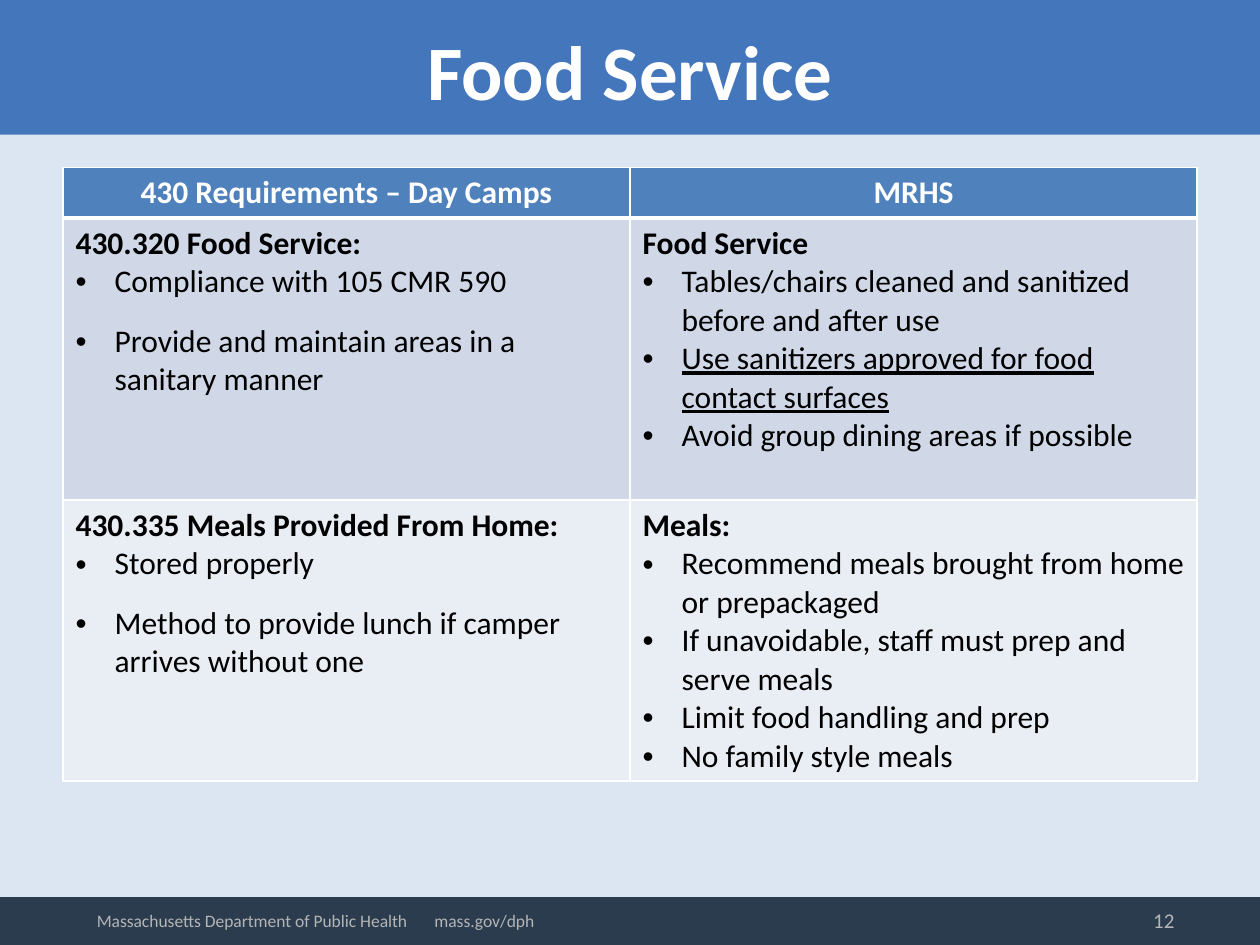
from lxml import etree
from pptx import Presentation
from pptx import util as u
from pptx.dml.color import RGBColor
from pptx.enum import shapes, text
from pptx.oxml.ns import qn

CELL = 0.5  # grid of 20 columns by 15 rows, in inches
WHITE, BLACK, GREY = "FFFFFF", "000000", "B5B5B5"
BAND, FOOTER, BACKDROP = "4376BB", "2A3C4E", "DCE6F2"
HEADER, ROW_FILLS = "4F81BD", ("D0D8E8", "E9EDF4")

HEADINGS = ("430 Requirements – Day Camps", "MRHS")
# Each cell: heading, bullets, space after a bullet
TOPICS = [
    [("430.320 Food Service:",
      ["Compliance with 105 CMR 590",
       "Provide and maintain areas in a sanitary manner"], 12),
     ("Food Service",
      ["Tables/chairs cleaned and sanitized before and after use",
       "Use sanitizers approved for food contact surfaces",
       "Avoid group dining areas if possible"], 0)],
    [("430.335 Meals Provided From Home:",
      ["Stored properly",
       "Method to provide lunch if camper arrives without one"], 12),
     ("Meals:",
      ["Recommend meals brought from home or prepackaged",
       "If unavoidable, staff must prep and serve meals",
       "Limit food handling and prep",
       "No family style meals"], 0)],
]
UNDERLINED = {"Use sanitizers approved for food contact surfaces"}


def color(value):
    return RGBColor.from_string(value)


def grid(*units):
    return [u.Inches(n * CELL) for n in units]


def paint(part, value):
    part.fill.solid()
    part.fill.fore_color.rgb = color(value)


class Deck:
    def __init__(self):
        self.prs = Presentation()
        self.prs.slide_width, self.prs.slide_height = grid(20, 15)
        self.slide = self.prs.slides.add_slide(self.prs.slide_layouts[6])
        background = self.slide.background
        paint(background, BACKDROP)

    def style(self, paragraph, size, ink, bold=False, underline=None):
        font = paragraph.font
        font.name, font.size = "Calibri", u.Pt(size)
        font.bold, font.underline = bold, underline
        font.color.rgb = color(ink)

    def band(self, top, height, fill):
        shape = self.slide.shapes.add_shape(
            shapes.MSO_SHAPE.RECTANGLE, *grid(0, top, 20, height))
        shape.shadow.inherit = False
        paint(shape, fill)
        shape.line.fill.background()

    def label(self, box, words, size, ink, align, bold=False, tab=None):
        frame = self.slide.shapes.add_textbox(*grid(*box)).text_frame
        frame.word_wrap = True
        frame.vertical_anchor = text.MSO_ANCHOR.MIDDLE
        paragraph = frame.paragraphs[0]
        paragraph.text, paragraph.alignment = words, align
        if tab:
            stops = etree.SubElement(paragraph._p.get_or_add_pPr(), qn("a:tabLst"))
            etree.SubElement(stops, qn("a:tab"), pos=str(u.Inches(tab)), algn="l")
        self.style(paragraph, size, ink, bold)

    def bullet(self, paragraph):
        props = paragraph._p.get_or_add_pPr()
        props.set("marL", str(u.Inches(0.31)))
        props.set("indent", str(u.Inches(-0.31)))
        etree.SubElement(props, qn("a:buFont"), typeface="Arial")
        etree.SubElement(props, qn("a:buChar"), char="•")

    def borders(self, cell, top=1, bottom=1):
        props = cell._tc.get_or_add_tcPr()
        widths = {"lnL": 1, "lnR": 1, "lnT": top, "lnB": bottom}
        for place, (side, width) in enumerate(widths.items()):
            line = etree.Element(qn("a:" + side), w=str(u.Pt(width)))
            fill = etree.SubElement(line, qn("a:solidFill"))
            etree.SubElement(fill, qn("a:srgbClr"), val=WHITE)
            props.insert(place, line)

    def topic(self, cell, heading, points, gap):
        frame = cell.text_frame
        frame.text = heading
        self.style(frame.paragraphs[0], 18, BLACK, bold=True)
        for point in points:
            paragraph = frame.add_paragraph()
            paragraph.text = point
            self.bullet(paragraph)
            paragraph.space_after = u.Pt(gap)
            self.style(paragraph, 18, BLACK, underline=point in UNDERLINED)

    def comparison(self, box, row_heights):
        table = self.slide.shapes.add_table(3, 2, *grid(*box)).table
        for row, height in zip(table.rows, grid(*row_heights)):
            row.height = height
        for column, heading in enumerate(HEADINGS):
            cell = table.cell(0, column)
            cell.text = heading
            paragraph = cell.text_frame.paragraphs[0]
            paragraph.alignment = text.PP_ALIGN.CENTER
            self.style(paragraph, 18, WHITE, bold=True)
            paint(cell, HEADER)
            self.borders(cell, bottom=3)
        for row, (topics, fill) in enumerate(zip(TOPICS, ROW_FILLS), start=1):
            for column, content in enumerate(topics):
                cell = table.cell(row, column)
                self.topic(cell, *content)
                paint(cell, fill)
                self.borders(cell, top=3 if row == 1 else 1)


def main():
    deck = Deck()
    align = text.PP_ALIGN

    # Title band and footer band
    deck.band(0, 2.14, BAND)
    deck.band(14.24, 0.76, FOOTER)
    deck.label((1, 0.16, 18, 1.9), "Food Service", 44, WHITE, align.CENTER, bold=True)

    # Requirements beside guidance
    deck.comparison((1, 2.66, 18, 9.62), (0.8, 4.48, 4.46))

    # Footer: page number, department and address
    deck.label((14.36, 14.2, 4.48, 0.8), "12", 12, GREY, align.RIGHT)
    deck.label((1.34, 14.24, 8.34, 0.74),
               "Massachusetts Department of Public Health\tmass.gov/dph",
               10, GREY, align.LEFT, tab=2.68)

    deck.prs.save("out.pptx")


if __name__ == "__main__":
    main()
